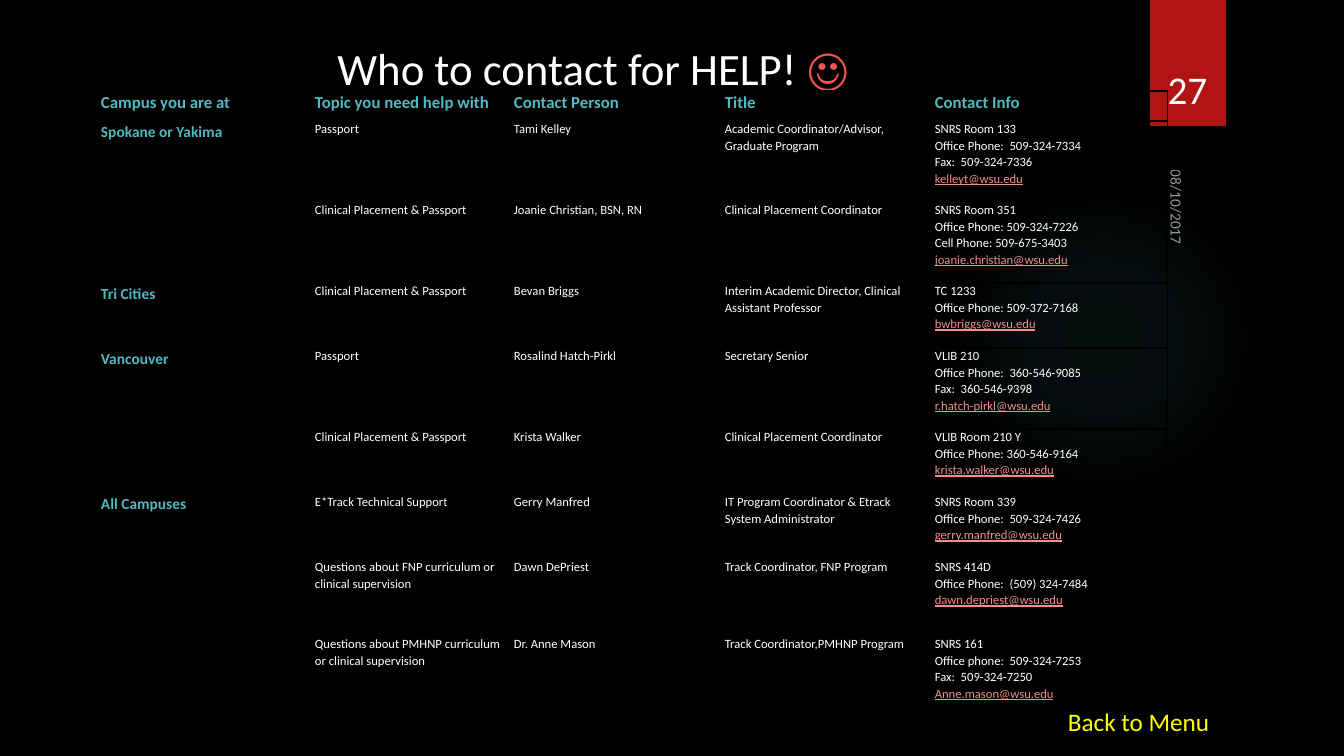
from lxml.etree import SubElement
from pptx import Presentation
from pptx.dml.color import RGBColor
from pptx.enum.shapes import MSO_SHAPE as Preset
from pptx.enum.text import MSO_ANCHOR as Anchor, MSO_AUTO_SIZE as AutoSize, PP_ALIGN as Align
from pptx.oxml import parse_xml
from pptx.oxml.ns import nsdecls, qn
from pptx.util import Pt

BLACK = RGBColor(0x00, 0x00, 0x00)
WHITE = RGBColor(0xFF, 0xFF, 0xFF)
RED = RGBColor(0xB0, 0x15, 0x13)
CORAL = RGBColor(0xED, 0x56, 0x54)
PINK = RGBColor(0xF2, 0x8E, 0x8D)
TEAL = RGBColor(0x50, 0xB9, 0xC1)
YELLOW = RGBColor(0xFF, 0xFF, 0x00)

SCALE = 12192000 / 1344

HEADER = {"size": Pt(12), "bold": True, "color": TEAL}
CAMPUS = {"size": Pt(11), "bold": True, "color": TEAL}
DETAIL = {"size": Pt(9), "bold": False, "color": WHITE}
EMAIL = {"size": Pt(9), "bold": False, "color": PINK, "underline": True}

COLUMNS = [214, 199, 211, 210, 237]
ROWS = [30, 81, 81, 65, 81, 65, 65, 77, 66]
HEADINGS = ["Campus you are at", "Topic you need help with", "Contact Person", "Title", "Contact Info"]
CAMPUSES = [
    ("Spokane or Yakima", [
        ("Passport", "Tami Kelley", "Academic Coordinator/Advisor, Graduate Program",
         ["SNRS Room 133", "Office Phone:  509-324-7334", "Fax:  509-324-7336", "kelleyt@wsu.edu"]),
        ("Clinical Placement & Passport", "Joanie Christian, BSN, RN", "Clinical Placement Coordinator",
         ["SNRS Room 351", "Office Phone: 509-324-7226", "Cell Phone: 509-675-3403",
          "joanie.christian@wsu.edu"]),
    ]),
    ("Tri Cities", [
        ("Clinical Placement & Passport", "Bevan Briggs",
         "Interim Academic Director, Clinical Assistant Professor",
         ["TC 1233", "Office Phone: 509-372-7168", "bwbriggs@wsu.edu"]),
    ]),
    ("Vancouver", [
        ("Passport", "Rosalind Hatch-Pirkl", "Secretary Senior",
         ["VLIB 210", "Office Phone:  360-546-9085", "Fax:  360-546-9398", "r.hatch-pirkl@wsu.edu"]),
        ("Clinical Placement & Passport", "Krista Walker", "Clinical Placement Coordinator",
         ["VLIB Room 210 Y", "Office Phone: 360-546-9164", "krista.walker@wsu.edu"]),
    ]),
    ("All Campuses", [
        ("E*Track Technical Support", "Gerry Manfred", "IT Program Coordinator & Etrack System Administrator",
         ["SNRS Room 339", "Office Phone:  509-324-7426", "gerry.manfred@wsu.edu"]),
        ("Questions about FNP curriculum or clinical supervision", "Dawn DePriest",
         "Track Coordinator, FNP Program",
         ["SNRS 414D", "Office Phone:  (509) 324-7484", "dawn.depriest@wsu.edu"]),
        ("Questions about PMHNP curriculum or clinical supervision", "Dr. Anne Mason",
         "Track Coordinator,PMHNP Program",
         ["SNRS 161", "Office phone:  509-324-7253", "Fax:  509-324-7250", "Anne.mason@wsu.edu"]),
    ]),
]


def px(length):
    return round(length * SCALE)


class SlideBuilder:
    font = "Calibri"

    def __init__(self, slide):
        self.slide = slide
        background = slide.background.fill
        background.solid()
        background.fore_color.rgb = BLACK

    def shape(self, preset, box, color):
        shape = self.slide.shapes.add_shape(preset, *map(px, box))
        shape.shadow.inherit = False
        shape.fill.solid()
        shape.fill.fore_color.rgb = color
        shape.line.fill.background()
        return shape

    def glow(self, box, color, stops):
        glow = self.shape(Preset.OVAL, box, color)
        marks = "".join(
            f'<a:gs pos="{pos * 1000}"><a:srgbClr val="{color}">'
            f'<a:alpha val="{alpha * 1000}"/></a:srgbClr></a:gs>' for pos, alpha in stops)
        gradient = parse_xml(
            f'<a:gradFill {nsdecls("a")}><a:gsLst>{marks}</a:gsLst><a:path path="circle">'
            '<a:fillToRect l="50000" t="50000" r="50000" b="50000"/></a:path></a:gradFill>')
        properties = glow._element.spPr
        properties.replace(properties.find(qn("a:solidFill")), gradient)

    def run(self, paragraph, text, style):
        run = paragraph.add_run()
        run.text = text
        run.font.name = self.font
        for key, value in style.items():
            if key == "color":
                run.font.color.rgb = value
            else:
                setattr(run.font, key, value)

    def text(self, box, runs, align=Align.LEFT, rotation=0, alpha=None, **frame_format):
        label = self.slide.shapes.add_textbox(*map(px, box))
        label.rotation = rotation
        for key, value in {"word_wrap": True, **frame_format}.items():
            setattr(label.text_frame, key, value)
        paragraph = label.text_frame.paragraphs[0]
        paragraph.alignment = align
        for text, style in runs:
            self.run(paragraph, text, style)
        if alpha is not None:
            for color in label._element.xpath(".//a:srgbClr"):
                SubElement(color, qn("a:alpha"), val=str(alpha * 1000))

    def table(self, left, top, columns, rows):
        frame = self.slide.shapes.add_table(
            len(rows), len(columns), px(left), px(top), px(sum(columns)), px(sum(rows)))
        table = frame.table
        table.first_row = table.horz_banding = False
        for column, width in zip(table.columns, columns):
            column.width = px(width)
        for row, height in zip(table.rows, rows):
            row.height = px(height)
        for cell in table.iter_cells():
            self.clear_cell(cell)
        return table

    def clear_cell(self, cell):
        margins = {"margin_left": 4, "margin_right": 4, "margin_top": 0, "margin_bottom": 0}
        for key, value in margins.items():
            setattr(cell, key, px(value))
        properties = cell._tc.get_or_add_tcPr()
        for side in ("lnL", "lnR", "lnT", "lnB"):
            properties.append(parse_xml(
                f'<a:{side} {nsdecls("a")} w="{Pt(1)}"><a:solidFill>'
                f'<a:srgbClr val="{BLACK}"/></a:solidFill></a:{side}>'))
        cell.fill.background()

    def cell(self, cell, lines, style):
        frame = cell.text_frame
        for index, line in enumerate(lines):
            paragraph = frame.add_paragraph() if index else frame.paragraphs[0]
            paragraph.line_spacing = 1.07
            self.run(paragraph, line, EMAIL if "@" in line else style)


def fill_contacts(builder, table):
    for column, heading in enumerate(HEADINGS):
        builder.cell(table.cell(0, column), [heading], HEADER)
    row = 1
    for campus, contacts in CAMPUSES:
        campus_cell = table.cell(row, 0)
        if len(contacts) > 1:
            campus_cell.merge(table.cell(row + len(contacts) - 1, 0))
        builder.cell(campus_cell, [campus], CAMPUS)
        for topic, person, title, info in contacts:
            for column, lines in enumerate([[topic], [person], [title], info], 1):
                builder.cell(table.cell(row, column), lines, DETAIL)
            row += 1


def main():
    deck = Presentation()
    deck.slide_width, deck.slide_height = px(1344), px(756)
    builder = SlideBuilder(deck.slides.add_slide(deck.slide_layouts[6]))
    builder.glow((949, 184, 310, 310), TEAL, [(0, 7), (36, 6), (69, 0)])
    builder.shape(Preset.RECTANGLE, (1150, 0, 76, 126), RED)
    builder.text((327, 35, 532, 65),
                 [("Who to contact for HELP!", {"size": Pt(32), "color": WHITE}),
                  (" ☺", {"size": Pt(32), "color": CORAL})],
                 Align.CENTER, vertical_anchor=Anchor.MIDDLE, auto_size=AutoSize.SHAPE_TO_FIT_TEXT)
    builder.text((1120, 198, 109, 33), [("08/10/2017", {"size": Pt(11), "color": WHITE})],
                 rotation=90, alpha=60)
    builder.text((1141, 32, 93, 85), [("27", {"size": Pt(28), "color": WHITE})],
                 Align.CENTER, vertical_anchor=Anchor.BOTTOM)
    builder.text((1058, 701, 163, 40), [("Back to Menu", {"size": Pt(18), "color": YELLOW})],
                 word_wrap=False, auto_size=AutoSize.SHAPE_TO_FIT_TEXT)
    fill_contacts(builder, builder.table(97, 91, COLUMNS, ROWS))
    deck.save("out.pptx")


if __name__ == "__main__":
    main()
